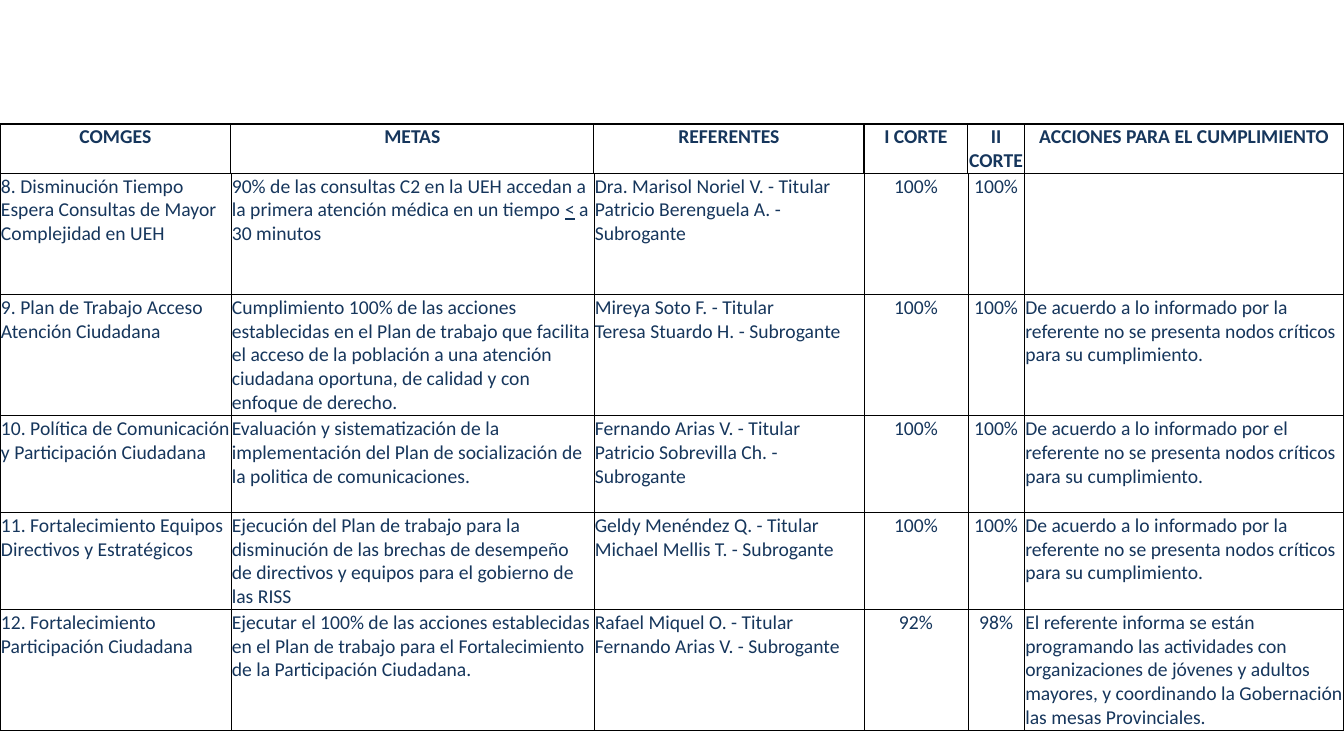
import pptx
import pptx.dml.color
import pptx.enum.text
import pptx.oxml.ns
import pptx.util
import lxml.etree

Inches = pptx.util.Inches
RGBColor = pptx.dml.color.RGBColor
ALIGN = pptx.enum.text.PP_ALIGN

NAVY = RGBColor(0x16, 0x36, 0x5C)
BLACK = RGBColor(0, 0, 0)
FONT = "Calibri"
SIZE = 14
THICK, THIN = 1, 0.5

WIDTHS = [2.29, 3.6, 2.68, 1.03, 0.56, 3.17]
HEIGHTS = [0.49, 1.2, 1.2, 0.96, 0.96, 1.2]
CENTRED = (3, 4)

HEADS = ["COMGES", "METAS", "REFERENTES", "I CORTE", "II CORTE",
         "ACCIONES PARA EL CUMPLIMIENTO"]


def action(who):
    return (f"De acuerdo a lo informado por {who} referente no se presenta "
            "nodos críticos para su cumplimiento.")


# Underscores mark underlined text; a newline is a line break
ROWS = [
    ["8. Disminución Tiempo Espera Consultas de Mayor Complejidad en UEH",
     "90% de las consultas C2 en la UEH accedan a la primera atención médica "
     "en un tiempo _<_ a 30 minutos",
     "Dra. Marisol Noriel V. - Titular\nPatricio Berenguela A. - Subrogante",
     "100%", "100%", ""],
    ["9. Plan de Trabajo Acceso Atención Ciudadana",
     "Cumplimiento 100% de las acciones establecidas en el Plan de trabajo que "
     "facilita el acceso de la población a una atención ciudadana oportuna, "
     "de calidad y con enfoque de derecho.",
     "Mireya Soto F. - Titular\nTeresa Stuardo H. - Subrogante",
     "100%", "100%", action("la")],
    ["10. Política de Comunicación y Participación Ciudadana",
     "Evaluación y sistematización de la implementación del Plan de "
     "socialización de la politica de comunicaciones.",
     "Fernando Arias V. - Titular\nPatricio Sobrevilla Ch. - Subrogante",
     "100%", "100%", action("el")],
    ["11. Fortalecimiento Equipos Directivos y Estratégicos",
     "Ejecución del Plan de trabajo para la disminución de las brechas de "
     "desempeño de directivos y equipos para el gobierno de las RISS",
     "Geldy Menéndez Q. - Titular\nMichael Mellis T. - Subrogante",
     "100%", "100%", action("la")],
    ["12. Fortalecimiento Participación Ciudadana",
     "Ejecutar el 100% de las acciones establecidas en el Plan de trabajo "
     "para el Fortalecimiento de la Participación Ciudadana.",
     "Rafael Miquel O. - Titular\nFernando Arias V. - Subrogante",
     "92%", "98%",
     "El referente informa se están programando las actividades con "
     "organizaciones de jóvenes y adultos mayores, y coordinando la "
     "Gobernación las mesas Provinciales."],
]


def border(cell, sides):
    """Draw the cell's borders; sides maps L, R, T, B to points."""
    props = cell._tc.get_or_add_tcPr()
    qn = pptx.oxml.ns.qn
    for side, width in sides.items():
        line = lxml.etree.SubElement(props, qn(f"a:ln{side}"),
                                     w=str(pptx.util.Pt(width)))
        fill = lxml.etree.SubElement(line, qn("a:solidFill"))
        lxml.etree.SubElement(fill, qn("a:srgbClr"), val=str(BLACK))


def write(cell, text, bold, centre):
    """Fill the cell with text, run by run."""
    para = cell.text_frame.paragraphs[0]
    para.alignment = ALIGN.CENTER if centre else ALIGN.LEFT
    for num, line in enumerate(text.split("\n")):
        if num:
            para.add_line_break()
        for part, piece in enumerate(line.split("_")):
            if not piece:
                continue
            run = para.add_run()
            run.text = piece
            run.font.name = FONT
            run.font.size = pptx.util.Pt(SIZE)
            run.font.bold = bold
            run.font.underline = part % 2 == 1
            run.font.color.rgb = NAVY


def goals(slide, left, top, width, height):
    """Table of goals, scaled to the given box."""
    data = [HEADS] + ROWS
    table = slide.shapes.add_table(len(data), len(HEADS), left, top,
                                   width, height).table
    table.first_row = False
    table.horz_banding = False
    for col, share in zip(table.columns, WIDTHS):
        col.width = int(width * share / sum(WIDTHS))
    for row, share in zip(table.rows, HEIGHTS):
        row.height = int(height * share / sum(HEIGHTS))

    last = len(HEADS) - 1
    for r, texts in enumerate(data):
        head = r == 0
        for c, text in enumerate(texts):
            cell = table.cell(r, c)
            cell.margin_left = cell.margin_right = Inches(0.01)
            cell.margin_top = Inches(0.01)
            cell.margin_bottom = 0
            # Header and outer sides are thick, inner lines thin
            border(cell, {"L": THICK if head or c == 0 else THIN,
                          "R": THICK if head or c == last else THIN,
                          "T": THICK if r < 2 else THIN,
                          "B": THICK if head else THIN})
            cell.fill.background()
            write(cell, text, head, head or c in CENTRED)


def main():
    deck = pptx.Presentation()
    deck.slide_width = Inches(13.33)
    deck.slide_height = Inches(7.5)
    slide = deck.slides.add_slide(deck.slide_layouts[6])
    goals(slide, 0, Inches(1.23), deck.slide_width, Inches(6.02))
    deck.save("out.pptx")


if __name__ == "__main__":
    main()
